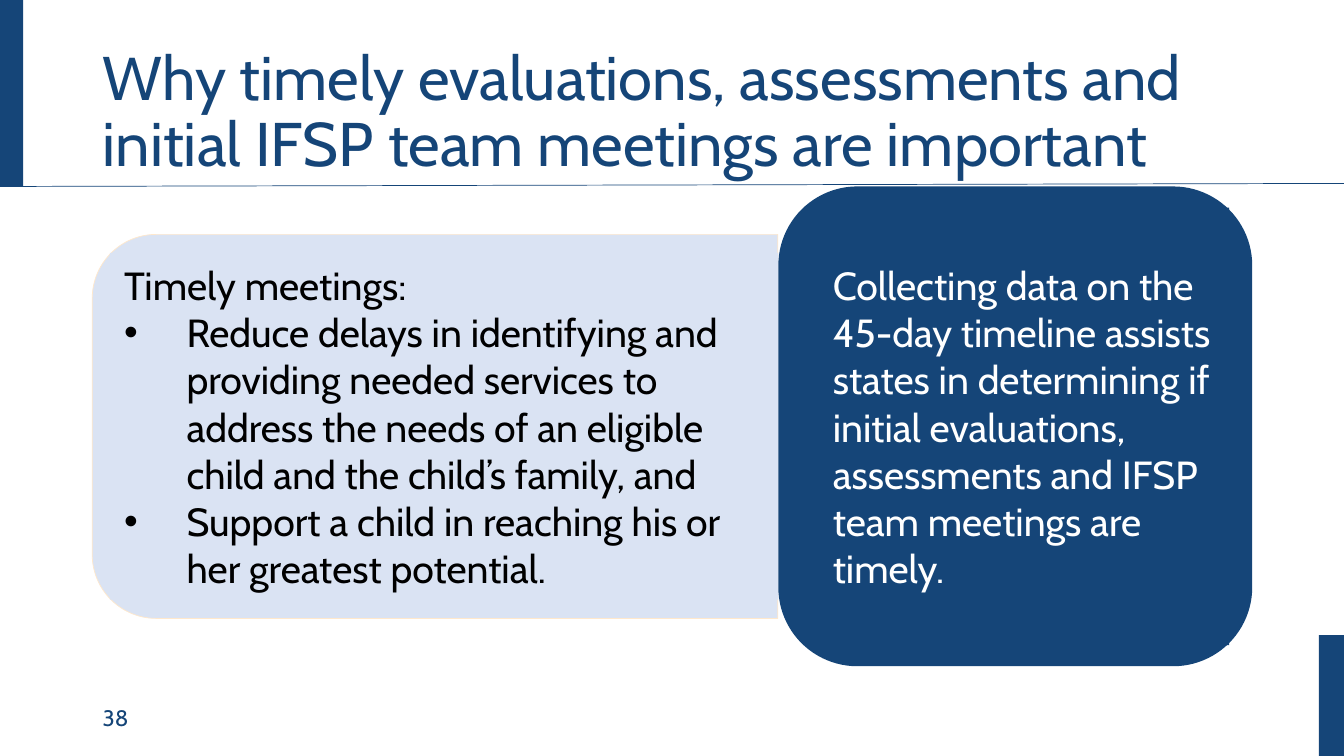
"""Builds the slide on why timely evaluations and initial IFSP meetings matter."""
import pptx
import pptx.util
import pptx.dml.color
import pptx.enum.shapes
import pptx.enum.text
import pptx.oxml.ns
import lxml.etree

Inches = pptx.util.Inches
Pt = pptx.util.Pt
RGBColor = pptx.dml.color.RGBColor
SHAPES = pptx.enum.shapes.MSO_SHAPE

NAVY = RGBColor(0x15, 0x45, 0x78)
PALE_BLUE = RGBColor(0xDA, 0xE3, 0xF3)
CREAM = RGBColor(0xFF, 0xE8, 0xCC)
BLACK = RGBColor(0, 0, 0)
WHITE = RGBColor(0xFF, 0xFF, 0xFF)

deck = pptx.Presentation()
deck.slide_width = Inches(13.33)
deck.slide_height = Inches(7.5)
page = deck.slides.add_slide(deck.slide_layouts[6])


def add_block(kind, left, top, width, height, color):
    block = page.shapes.add_shape(kind, Inches(left), Inches(top), Inches(width), Inches(height))
    block.shadow.inherit = False
    block.fill.solid()
    block.fill.fore_color.rgb = color
    block.line.fill.background()
    return block


def write_text(box, lines, size=28, color=BLACK, inset=0.1, spacing=None, bullets_from=None):
    frame = box.text_frame
    frame.word_wrap = True
    frame.vertical_anchor = pptx.enum.text.MSO_ANCHOR.MIDDLE
    frame.margin_left = frame.margin_right = Inches(inset)
    frame.margin_top = frame.margin_bottom = Inches(inset / 2)
    for index, line in enumerate(lines):
        para = frame.add_paragraph() if index else frame.paragraphs[0]
        para.alignment = pptx.enum.text.PP_ALIGN.LEFT
        para.line_spacing = spacing
        if bullets_from is not None and index >= bullets_from:
            settings = para._p.get_or_add_pPr()
            settings.set("marL", str(Inches(0.62)))
            settings.set("indent", str(-Inches(0.62)))
            font = lxml.etree.SubElement(settings, pptx.oxml.ns.qn("a:buFont"))
            font.set("typeface", "Arial")
            bullet = lxml.etree.SubElement(settings, pptx.oxml.ns.qn("a:buChar"))
            bullet.set("char", "•")
        span = para.add_run()
        span.text = line
        span.font.name = "Cabin"
        span.font.size = Pt(size)
        span.font.color.rgb = color


number_box = page.shapes.add_textbox(Inches(0.92), Inches(6.92), Inches(3), Inches(0.4))
write_text(number_box, ["38"], size=16, color=NAVY)

add_block(SHAPES.RECTANGLE, -0.02, 0, 0.25, 1.85, NAVY)
title_rule = page.shapes.add_connector(
    pptx.enum.shapes.MSO_CONNECTOR.STRAIGHT,
    Inches(-0.02), Inches(1.85), Inches(13.33), Inches(1.82))
title_rule.line.color.rgb = NAVY
title_rule.line.width = Pt(0.5)
lxml.etree.SubElement(title_rule._element.spPr, pptx.oxml.ns.qn("a:effectLst"))
add_block(SHAPES.RECTANGLE, 13.08, 6.3, 0.25, 1.2, NAVY)

title_box = page.shapes.add_textbox(Inches(0.92), Inches(0.4), Inches(11.5), Inches(1.45))
write_text(
    title_box,
    ["Why timely evaluations, assessments and initial IFSP team meetings are important"],
    size=44, color=NAVY, spacing=0.9)

meetings_panel = add_block(SHAPES.ROUND_2_SAME_RECTANGLE, 2.41, 0.83, 3.81, 6.8, PALE_BLUE)
meetings_panel.rotation = 270
meetings_panel.line.color.rgb = CREAM
meetings_panel.line.width = Pt(0.5)
meetings_text = add_block(SHAPES.RECTANGLE, 1.09, 2.51, 6.63, 3.44, PALE_BLUE)
write_text(
    meetings_text,
    ["Timely meetings:",
     "Reduce delays in identifying and providing needed services to address the needs "
     "of an eligible child and the child’s family, and",
     "Support a child in reaching his or her greatest potential."],
    inset=0.14, bullets_from=1)

add_block(SHAPES.ROUNDED_RECTANGLE, 7.72, 1.85, 4.7, 4.76, NAVY)
data_text = add_block(SHAPES.RECTANGLE, 8.1, 2.06, 4.09, 4.34, NAVY)
write_text(
    data_text,
    ["Collecting data on the 45-day timeline assists states in determining if initial "
     "evaluations, assessments and IFSP team meetings are timely."],
    color=WHITE, inset=0.16)

deck.save("out.pptx")
